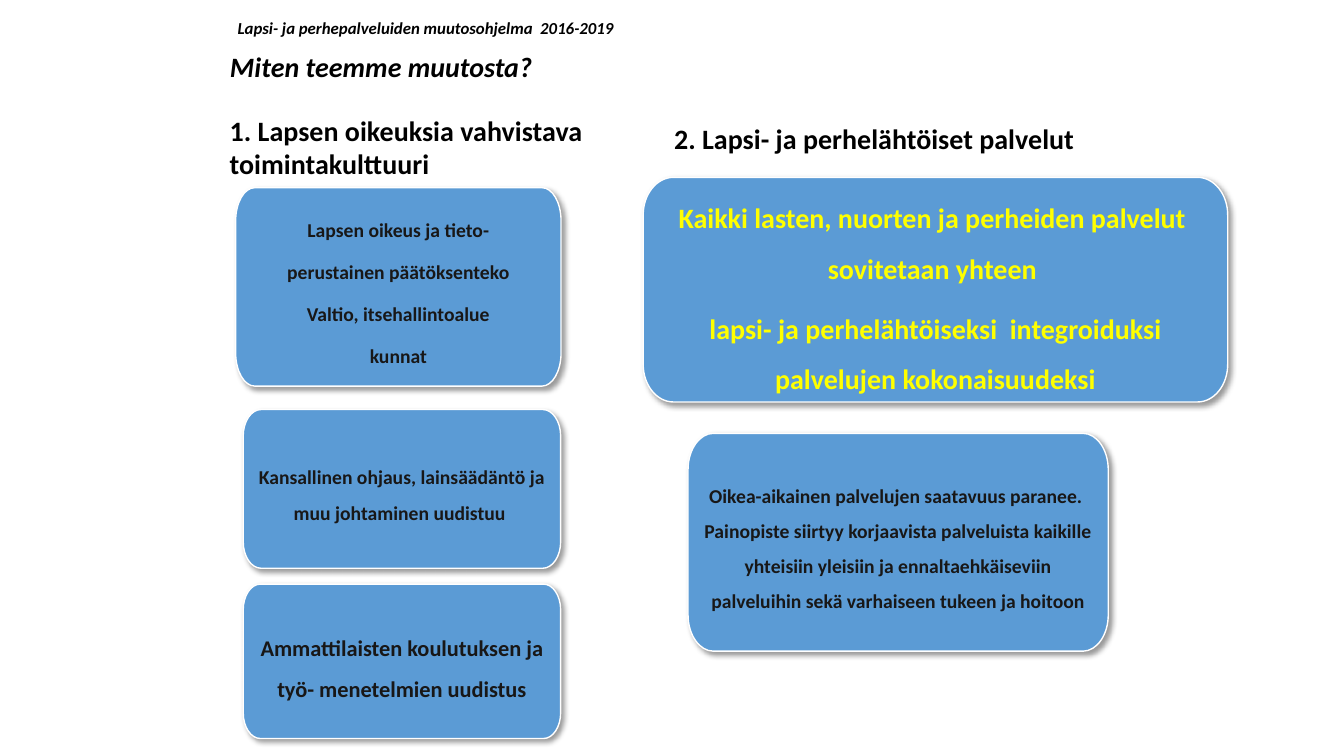
from lxml.etree import SubElement
from pptx import Presentation
from pptx.dml.color import RGBColor
from pptx.enum.text import MSO_ANCHOR, MSO_AUTO_SIZE, PP_ALIGN
from pptx.oxml.ns import qn
from pptx.util import Cm, Pt

BLUE, WHITE, BLACK, DARK, YELLOW = "5B9BD5", "FFFFFF", "000000", "181717", "FFFF00"

BOXES = [
    (5.94, 4.73, 8.2, 5, 0.48, 14, DARK, 0.35,
     ["Lapsen oikeus ja tieto-", "perustainen päätöksenteko",
      "Valtio, itsehallintoalue", "kunnat"]),
    (6.13, 10.32, 8, 4, 0.45, 14, DARK, 0.35,
     ["Kansallinen ohjaus, lainsäädäntö ja muu johtaminen uudistuu "]),
    (6.13, 14.72, 8, 3.89, 0.43, 16, DARK, 0.35,
     ["Ammattilaisten koulutuksen ja työ- menetelmien uudistus"]),
    (16.21, 4.47, 14.73, 5.66, 0.76, 20, YELLOW, 0.35,
     ["Kaikki lasten, nuorten ja perheiden palvelut  sovitetaan yhteen ",
      "lapsi- ja perhelähtöiseksi  integroiduksi palvelujen kokonaisuudeksi"]),
    (17.34, 10.92, 10.59, 5.49, 0.64, 14, DARK, 0,
     ["Oikea-aikainen palvelujen saatavuus paranee. ",
      "Painopiste siirtyy korjaavista palveluista kaikille yhteisiin yleisiin ja "
      "ennaltaehkäiseviin palveluihin sekä varhaiseen tukeen ja hoitoon"]),
]

LABELS = [
    (5.54, 2.73, 10.39, 1.96, "1. Lapsen oikeuksia vahvistava toimintakulttuuri", 20, False, True),
    (16.74, 2.93, 10.8, 1.12, "2. Lapsi- ja perhelähtöiset palvelut", 20, False, True),
    (5.74, 0.33, 10.24, 0.76, "Lapsi- ja perhepalveluiden muutosohjelma  2016-2019", 12, True, False),
]


def rgb(value):
    return RGBColor.from_string(value)


def set_attrs(obj, values):
    for name, value in values.items():
        setattr(obj, name, value)


def write(tf, lines, size, color, para=None, italic=False):
    for i, line in enumerate(lines):
        p = tf.add_paragraph() if i else tf.paragraphs[0]
        set_attrs(p, para or {})
        r = p.add_run()
        r.text = line
        set_attrs(r.font, {"name": "Calibri", "size": Pt(size), "bold": True, "italic": italic})
        r.font.color.rgb = rgb(color)


def add_shadow(sp):
    effects = sp._element.spPr.find(qn("a:effectLst"))
    shadow = SubElement(effects, qn("a:outerShdw"), blurRad=str(Pt(4)), dist=str(Pt(3)),
                        dir=str(45 * 60000), algn="tl", rotWithShape="0")
    clr = SubElement(shadow, qn("a:srgbClr"), val=BLACK)
    SubElement(clr, qn("a:alpha"), val="40000")


def corner_points(x, y, w, h, rx):
    ry = h / 6
    offsets = [(0, ry), (0, 0.45 * ry), (0.45 * rx, 0), (rx, 0)]
    corners = [(x, y, 1, 1), (x + w, y, -1, 1), (x + w, y + h, -1, -1), (x, y + h, 1, -1)]
    for i, (cx, cy, sx, sy) in enumerate(corners):
        for dx, dy in offsets[::-1] if i % 2 else offsets:
            yield Cm(cx + sx * dx), Cm(cy + sy * dy)


def curve_corners(sp):
    lines = list(sp._element.iter(qn("a:lnTo")))
    for i in range(0, len(lines), 4):
        curve, *others = lines[i:i + 3]
        for other in others:
            curve.append(other[0])
            other.getparent().remove(other)
        curve.tag = qn("a:cubicBezTo")


def add_box(slide, x, y, w, h, rx, size, color, after, lines):
    start, *rest = corner_points(x, y, w, h, rx)
    builder = slide.shapes.build_freeform(*start)
    builder.add_line_segments(rest, close=True)
    sp = builder.convert_to_shape()
    curve_corners(sp)
    sp.shadow.inherit = False
    add_shadow(sp)
    sp.fill.solid()
    sp.fill.fore_color.rgb = rgb(BLUE)
    sp.line.color.rgb = rgb(WHITE)
    sp.line.width = Pt(1)
    tf = sp.text_frame
    set_attrs(tf, {"word_wrap": True, "vertical_anchor": MSO_ANCHOR.MIDDLE,
                   "margin_left": Cm(0.25), "margin_right": Cm(0.25),
                   "margin_top": Cm(0.19), "margin_bottom": Cm(0.19)})
    para = {"alignment": PP_ALIGN.CENTER, "line_spacing": 1.5, "space_after": Pt(size * after)}
    write(tf, lines, size, color, para)


def add_label(slide, x, y, w, h, text, size, italic, wrap):
    tf = slide.shapes.add_textbox(Cm(x), Cm(y), Cm(w), Cm(h)).text_frame
    set_attrs(tf, {"word_wrap": wrap, "auto_size": MSO_AUTO_SIZE.SHAPE_TO_FIT_TEXT})
    write(tf, [text], size, BLACK, italic=italic)


def set_title(slide, text):
    sp = slide.shapes.title
    set_attrs(sp, {"left": Cm(5.54), "top": Cm(1.12), "width": Cm(21.79), "height": Cm(1.12)})
    set_attrs(sp.text_frame, {"word_wrap": True, "vertical_anchor": MSO_ANCHOR.TOP,
                              "auto_size": MSO_AUTO_SIZE.SHAPE_TO_FIT_TEXT})
    para = {"alignment": PP_ALIGN.LEFT, "line_spacing": 1.0, "space_before": Pt(0)}
    write(sp.text_frame, [text], 20, BLACK, para, italic=True)


def main():
    prs = Presentation()
    set_attrs(prs, {"slide_width": Cm(33.87), "slide_height": Cm(19.05)})
    slide = prs.slides.add_slide(prs.slide_layouts[5])
    set_title(slide, "Miten teemme muutosta?")
    for box in BOXES:
        add_box(slide, *box)
    for label in LABELS:
        add_label(slide, *label)
    prs.save("out.pptx")


if __name__ == "__main__":
    main()
